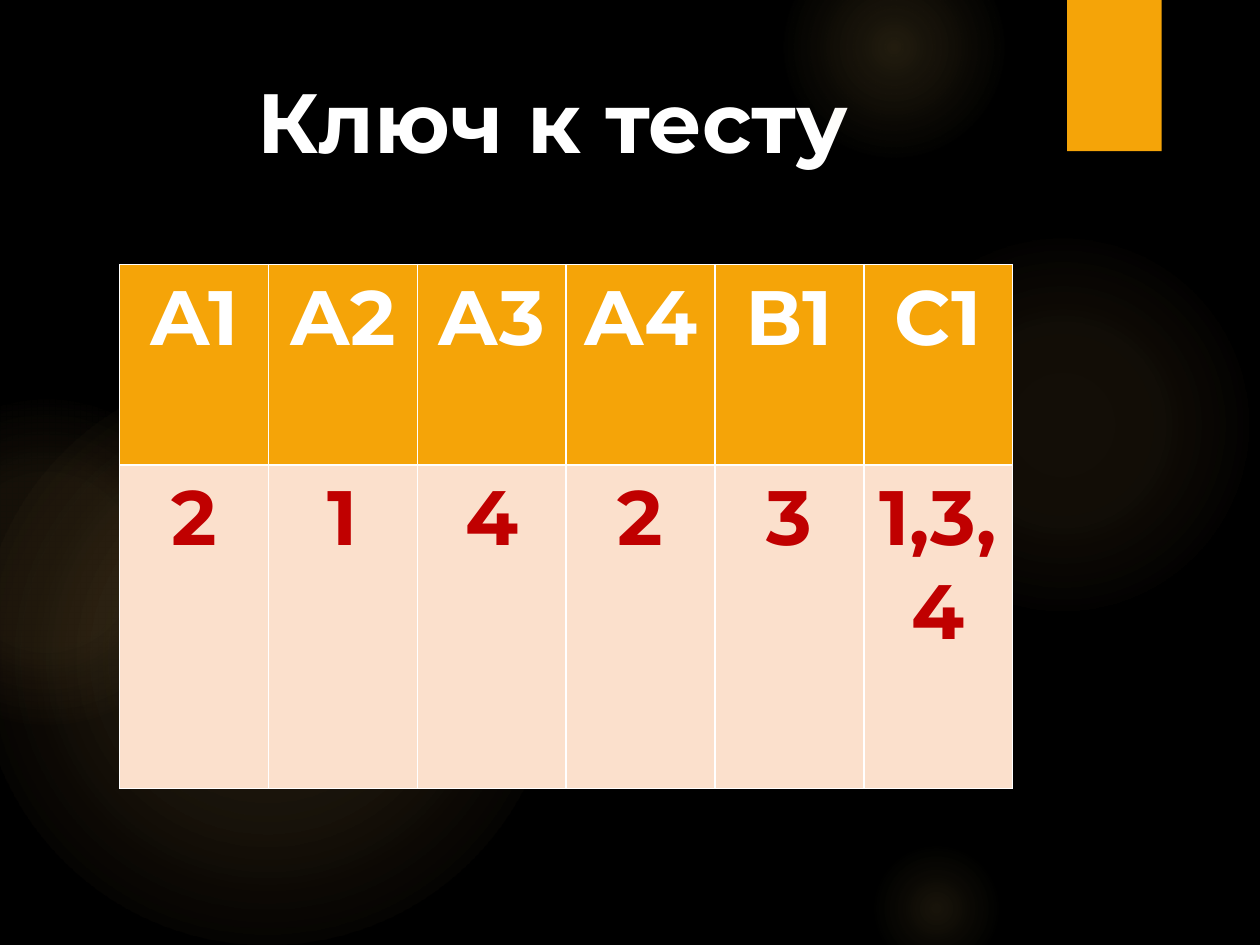
from lxml.etree import SubElement
from pptx import Presentation
from pptx.dml.color import RGBColor
from pptx.enum.shapes import MSO_SHAPE as SHAPE
from pptx.enum.text import MSO_ANCHOR as ANCHOR, PP_ALIGN as ALIGN
from pptx.oxml import parse_xml
from pptx.oxml.ns import nsdecls, qn
from pptx.util import Pt

BLACK = RGBColor(0x00, 0x00, 0x00)
WHITE = RGBColor(0xFF, 0xFF, 0xFF)
ORANGE = RGBColor(0xF5, 0xA4, 0x08)
PEACH = RGBColor(0xFB, 0xE0, 0xCC)
RED = RGBColor(0xC0, 0x00, 0x00)
GLOW = RGBColor(0xFA, 0xC9, 0x6A)

# Left, top, diameter, then (position %, opacity %) from the centre outwards
GLOWS = [
    (496, 131.76, 221.76, [(0, 7), (36, 6), (69, 0)]),
    (447.84, -36, 126, [(0, 14), (36, 7), (73, 0)]),
    (496, 480.24, 77.76, [(0, 10), (31, 5), (66, 0)]),
    (-12.24, 210.24, 329.76, [(0, 11), (36, 10), (75, 0)]),
    (-66.24, 228.24, 185.76, [(0, 8), (36, 8), (72, 0)]),
]
HEADS = ["А1", "А2", "А3", "А4", "В1", "С1"]
ANSWERS = ["2", "1", "4", "2", "3", "1,3,4"]


class Deck:
    font = "Montserrat"

    def __init__(self, width, height):
        self.prs = Presentation()
        self.prs.slide_width, self.prs.slide_height = Pt(width), Pt(height)

    def add_slide(self, color):
        self.s = self.prs.slides.add_slide(self.prs.slide_layouts[5])
        fill = self.s.background.fill
        fill.solid()
        fill.fore_color.rgb = color

    def text(self, tf, text, size, color):
        p = tf.paragraphs[0]
        p.alignment = ALIGN.CENTER
        r = p.add_run()
        r.text = text
        for name, value in dict(name=self.font, size=Pt(size), bold=True).items():
            setattr(r.font, name, value)
        r.font.color.rgb = color

    def shape(self, kind, x, y, w, h):
        sp = self.s.shapes.add_shape(kind, Pt(x), Pt(y), Pt(w), Pt(h))
        sp.shadow.inherit = False
        sp.line.fill.background()
        return sp

    def block(self, x, y, w, h, color):
        sp = self.shape(SHAPE.RECTANGLE, x, y, w, h)
        sp.fill.solid()
        sp.fill.fore_color.rgb = color

    def glow(self, x, y, d, stops):
        sp = self.shape(SHAPE.OVAL, x, y, d, d)
        gs = "".join(
            f'<a:gs pos="{pos * 1000}"><a:srgbClr val="{GLOW}">'
            f'<a:alpha val="{alpha * 1000}"/></a:srgbClr></a:gs>'
            for pos, alpha in stops)
        grad = parse_xml(
            f'<a:gradFill {nsdecls("a")} rotWithShape="1"><a:gsLst>{gs}</a:gsLst>'
            '<a:path path="circle"><a:fillToRect l="50000" t="50000" r="50000" '
            'b="50000"/></a:path></a:gradFill>')
        sp.element.spPr.find(qn("a:prstGeom")).addnext(grad)

    def title(self, x, y, w, h, text, size, color):
        sp = self.s.shapes.title
        box = dict(left=x, top=y, width=w, height=h)
        for name, value in box.items():
            setattr(sp, name, Pt(value))
        tf = sp.text_frame
        tf.vertical_anchor = ANCHOR.TOP
        self.text(tf, text, size, color)

    def borders(self, cell, color, width):
        tcPr = cell._tc.get_or_add_tcPr()
        for i, side in enumerate(("lnL", "lnR", "lnT", "lnB")):
            ln = parse_xml(f'<a:{side} {nsdecls("a")} w="{Pt(width)}"/>')
            fill = SubElement(ln, qn("a:solidFill"))
            SubElement(fill, qn("a:srgbClr")).set("val", str(color))
            tcPr.insert(i, ln)

    def table(self, x, y, col_width, rows, size):
        """Each row is (height, texts, fill colour, text colour)."""
        cols = len(rows[0][1])
        total = sum(row[0] for row in rows)
        table = self.s.shapes.add_table(
            len(rows), cols, Pt(x), Pt(y), Pt(col_width * cols), Pt(total)).table
        for col in table.columns:
            col.width = Pt(col_width)
        for i, (height, texts, fill, color) in enumerate(rows):
            table.rows[i].height = Pt(height)
            for j, text in enumerate(texts):
                cell = table.cell(i, j)
                cell.fill.solid()
                cell.fill.fore_color.rgb = fill
                self.borders(cell, WHITE, 1)
                self.text(cell.text_frame, text, size, color)


def main():
    deck = Deck(720, 540)
    deck.add_slide(BLACK)

    # Background glows and corner tab
    for glow in GLOWS:
        deck.glow(*glow)
    deck.block(609.84, 0, 54, 86.4, ORANGE)

    # Title and answer key
    deck.title(38.16, 36, 555.84, 110.16, "Ключ к тесту", 48, WHITE)
    deck.table(68.4, 151.2, 85.05, [
        (114.5, HEADS, ORANGE, WHITE),
        (185, ANSWERS, PEACH, RED),
    ], 44)

    deck.prs.save("out.pptx")


if __name__ == "__main__":
    main()
